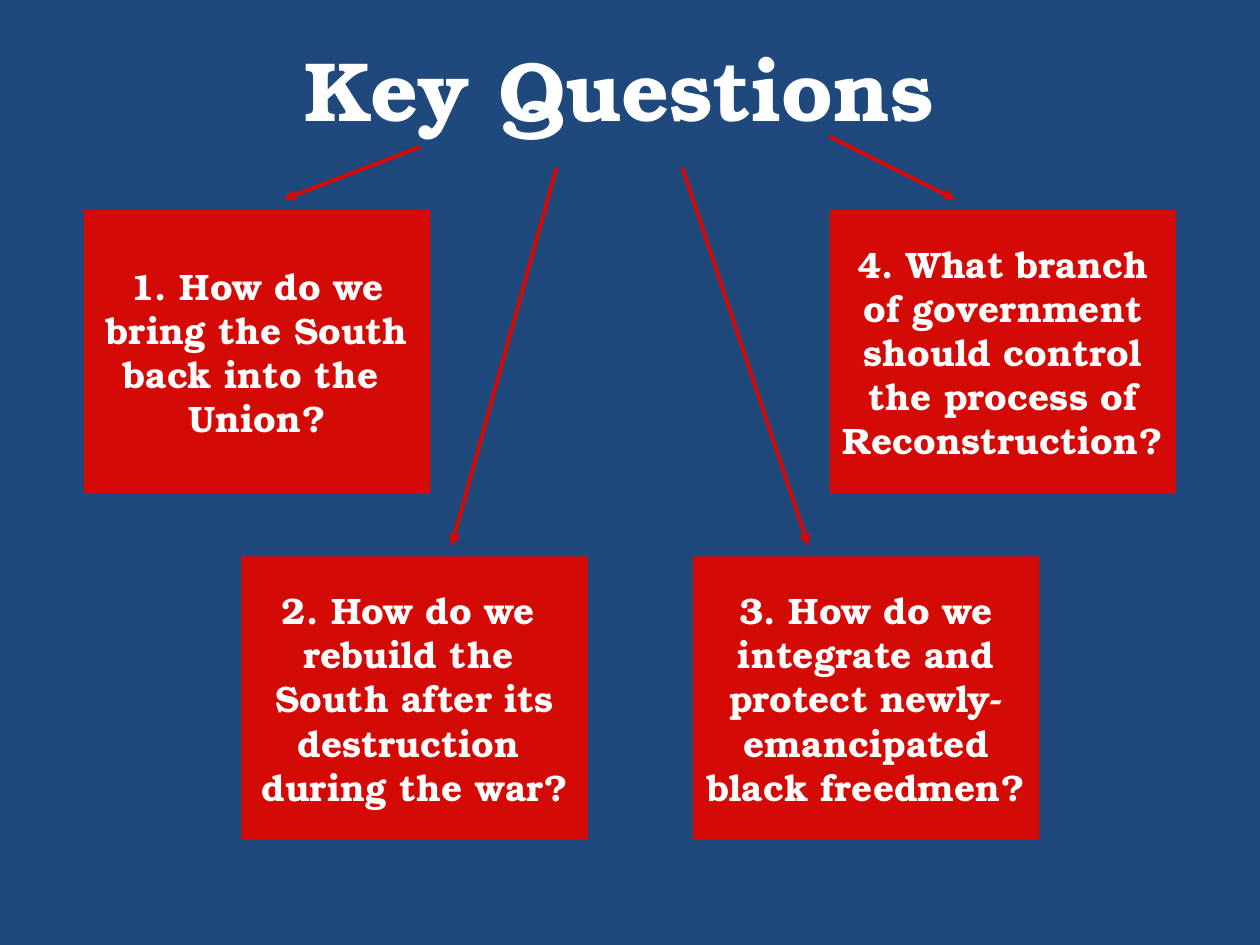
from lxml import etree
from pptx import Presentation
from pptx import util as u
from pptx.dml.color import RGBColor
from pptx.enum import shapes, text
from pptx.oxml import ns

WIDTH, HEIGHT = 10, 7.5
COLUMNS, ROWS = 120, 90
FONT = "TeX Gyre Bonum"
BLUE, RED, WHITE = "1F497D", "D30A05", "FFFFFF"
BOX_SIZE = (33, 27)  # columns, rows

# Left column, top row and lines of each question
QUESTIONS = [
    (8, 20, ["1. How do we", "bring the South", "back into the ", "Union?"]),
    (23, 53, ["2. How do we ", "rebuild the ", "South after its",
              "destruction ", "during the war?"]),
    (66, 53, ["3. How do we", "integrate and", "protect newly-",
              "emancipated", "black freedmen?"]),
    (79, 20, ["4. What branch", "of government", "should control",
              "the process of", "Reconstruction?"]),
]

# Start and end of each arrow, as column and row
ARROWS = [
    (40, 14, 27, 19),
    (53, 16, 43, 52),
    (65, 16, 77, 52),
    (79, 13, 91, 19),
]


def color(value):
    return RGBColor.from_string(value)


def across(columns):
    return u.Inches(WIDTH * columns / COLUMNS)


def down(rows):
    return u.Inches(HEIGHT * rows / ROWS)


def add_child(parent, tag, **attributes):
    return etree.SubElement(parent, ns.qn(tag), attributes)


def write_lines(para, lines, size):
    """Add centred bold white lines and return their spans."""
    para.alignment = text.PP_ALIGN.CENTER
    spans = []
    for line in lines:
        if spans:
            para.add_line_break()
        span = para.add_run()
        span.text = line
        span.font.name = FONT
        span.font.size = u.Pt(size)
        span.font.bold = True
        span.font.color.rgb = color(WHITE)
        spans.append(span)
    return spans


def add_text_shadow(span):
    effects = etree.Element(ns.qn("a:effectLst"))
    shadow = add_child(effects, "a:outerShdw", blurRad="38100", dist="38100",
                       dir="2700000", algn="tl")
    add_child(shadow, "a:srgbClr", val=RED)
    # Effects come right after the fill
    fill = span.font._element.find(ns.qn("a:solidFill"))
    fill.addnext(effects)


def add_title(page, title):
    box = page.shapes.add_textbox(across(4), down(3), across(110), down(10.8))
    frame = box.text_frame
    frame.word_wrap = True
    frame.auto_size = text.MSO_AUTO_SIZE.SHAPE_TO_FIT_TEXT
    for span in write_lines(frame.paragraphs[0], [title], 48):
        add_text_shadow(span)


def add_question(page, column, row, lines):
    columns, rows = BOX_SIZE
    box = page.shapes.add_shape(shapes.MSO_SHAPE.RECTANGLE, across(column),
                                down(row), across(columns), down(rows))
    box.shadow.inherit = False
    box.fill.solid()
    box.fill.fore_color.rgb = color(RED)
    box.line.fill.background()
    frame = box.text_frame
    frame.word_wrap = False
    frame.vertical_anchor = text.MSO_ANCHOR.MIDDLE
    write_lines(frame.paragraphs[0], lines, 21)


def add_arrow(page, from_column, from_row, to_column, to_row):
    arrow = page.shapes.add_connector(
        shapes.MSO_CONNECTOR.STRAIGHT, across(from_column), down(from_row),
        across(to_column), down(to_row))
    arrow.line.color.rgb = color(RED)
    arrow.line.width = u.Pt(2.25)
    add_child(arrow.line._get_or_add_ln(), "a:tailEnd", type="triangle")
    add_child(arrow._element.spPr, "a:effectLst")


def main():
    deck = Presentation()
    deck.slide_width = u.Inches(WIDTH)
    deck.slide_height = u.Inches(HEIGHT)
    page = deck.slides.add_slide(deck.slide_layouts[6])
    page.background.fill.solid()
    page.background.fill.fore_color.rgb = color(BLUE)

    # Heading
    add_title(page, "Key Questions")

    # Question boxes
    for column, row, lines in QUESTIONS:
        add_question(page, column, row, lines)

    # Arrows from the heading to the questions
    for ends in ARROWS:
        add_arrow(page, *ends)

    deck.save("out.pptx")


if __name__ == "__main__":
    main()
